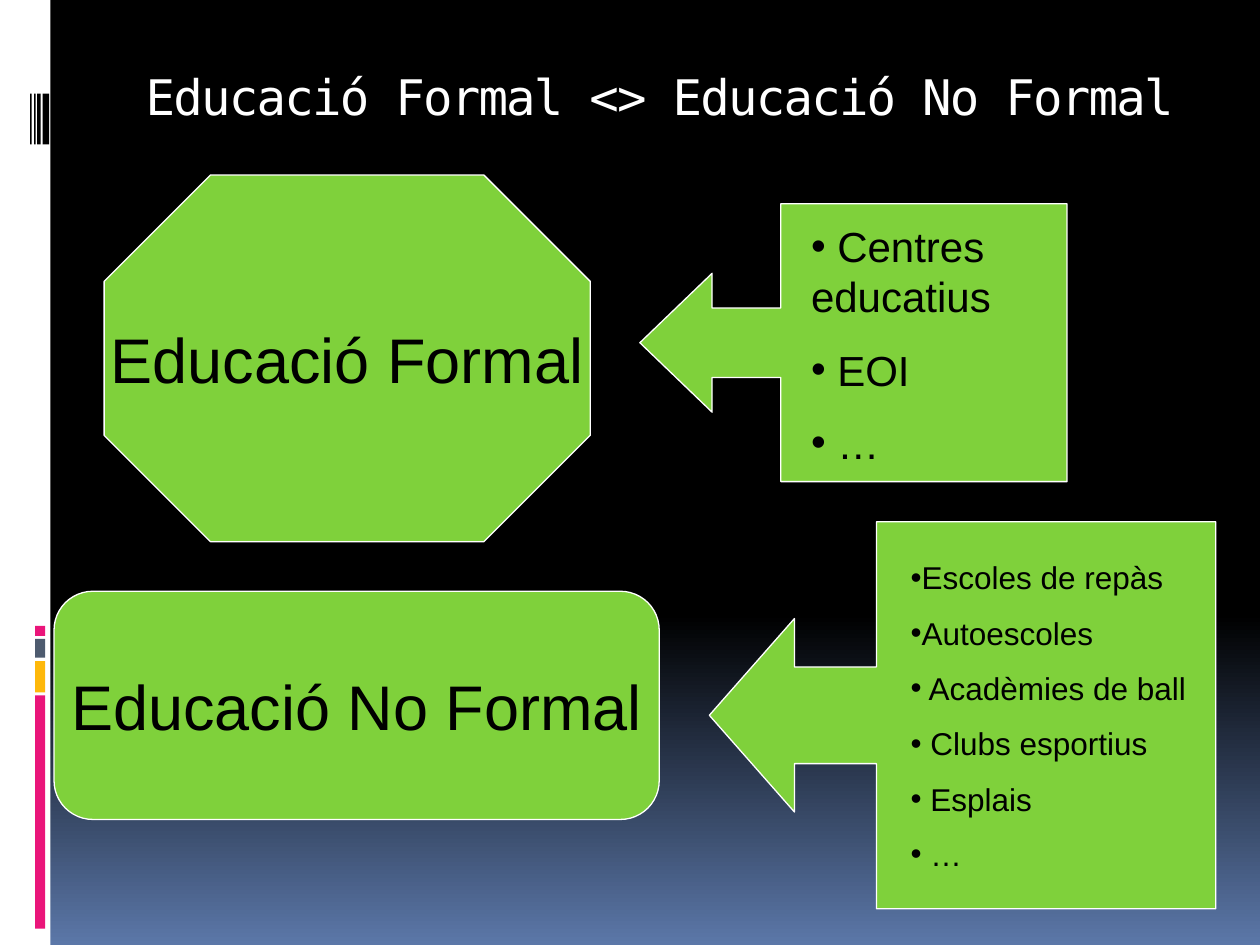
import copy

from lxml import etree
from pptx import Presentation
from pptx import util as u
from pptx.dml.color import RGBColor
from pptx.enum import shapes, text
from pptx.oxml import ns

GREEN, WHITE, BLACK, PINK = "7FD13B", "FFFFFF", "000000", "EA157A"
KIND = shapes.MSO_SHAPE


def add_block(kind, box, fill, outline=None, adjustments=()):
    shape = slide.shapes.add_shape(kind, *[u.Cm(v) for v in box])
    shape.shadow.inherit = False
    shape.fill.solid()
    shape.fill.fore_color.rgb = RGBColor.from_string(fill)
    if outline:
        shape.line.color.rgb = RGBColor.from_string(outline)
        shape.line.width = u.Pt(0.75)
    else:
        shape.line.fill.background()
    for index, value in enumerate(adjustments):
        shape.adjustments[index] = value
    return shape


def format_text(paragraph, size, font="Arial", color=BLACK):
    for run in paragraph.runs:
        run.font.size = u.Pt(size)
        run.font.name = font
        run.font.color.rgb = RGBColor.from_string(color)


presentation = Presentation()
presentation.slide_width = u.Cm(25.4)
presentation.slide_height = u.Cm(19.05)
slide = presentation.slides.add_slide(presentation.slide_layouts[6])

background = slide.background.fill
background.gradient()
background.gradient_angle = 270
stop_list = slide.element.find(".//" + ns.qn("a:gsLst"))
stop_list.insert(1, copy.deepcopy(stop_list[0]))
stops = [(0, BLACK), (0.65, BLACK), (1, "5B77A8")]
for stop, (position, color) in zip(background.gradient_stops, stops):
    stop.position = position
    stop.color.rgb = RGBColor.from_string(color)

add_block(KIND.RECTANGLE, (0, 0, 1.02, 19.05), WHITE)
for top, height, color in [
    (14.02, 4.7, PINK),
    (13.33, 0.63, "FEB80A"),
    (12.88, 0.38, "4E5B6F"),
    (12.62, 0.2, PINK),
]:
    add_block(KIND.RECTANGLE, (0.71, top, 0.2, height), color)
for left, width in [(0.86, 0.13), (0.75, 0.07), (0.69, 0.03), (0.61, 0.03)]:
    add_block(KIND.RECTANGLE, (left, 1.89, width, 1.02), BLACK)

title = slide.shapes.add_textbox(u.Cm(1.19), u.Cm(1.19), u.Cm(24.21), u.Cm(1.5))
title.text_frame.word_wrap = True
title.text_frame.vertical_anchor = text.MSO_ANCHOR.MIDDLE
title.text_frame.text = "Educació Formal <> Educació No Formal"
paragraph = title.text_frame.paragraphs[0]
paragraph.alignment = text.PP_ALIGN.CENTER
format_text(paragraph, 28, "DejaVu Sans Mono", WHITE)
paragraph.runs[0].font._element.set("spc", "-100")

for kind, box, adjustment, label in [
    (KIND.OCTAGON, (2.1, 3.53, 9.8, 7.39), 0.29, "Educació Formal"),
    (KIND.ROUNDED_RECTANGLE, (1.09, 11.92, 12.2, 4.6), 0.17, "Educació No Formal"),
]:
    shape = add_block(kind, box, GREEN, WHITE, [adjustment])
    shape.text_frame.word_wrap = False
    shape.text_frame.vertical_anchor = text.MSO_ANCHOR.MIDDLE
    shape.text_frame.text = label
    paragraph = shape.text_frame.paragraphs[0]
    paragraph.alignment = text.PP_ALIGN.CENTER
    format_text(paragraph, 36)

callouts = [
    ((14.3, 10.52, 10.21, 7.8), 0.22, (18.11, 11.13, 9.6, 6.76), 18, 10,
     ["Escoles de repàs", "Autoescoles", " Acadèmies de ball",
      " Clubs esportius", " Esplais", " …"]),
    ((12.9, 4.11, 8.61, 5.6), 0.26, (16.1, 4.32, 6.2, 5.38), 24, 13,
     [" Centres educatius", " EOI", " …"]),
]
for arrow_box, head, text_box, size, gap, items in callouts:
    add_block(KIND.LEFT_ARROW_CALLOUT, arrow_box, GREEN, WHITE, [0.25, 0.25, head, 0.67])
    item_list = slide.shapes.add_textbox(*[u.Cm(v) for v in text_box])
    item_list.text_frame.word_wrap = True
    item_list.text_frame.text = "\n".join(items)
    for paragraph in item_list.text_frame.paragraphs:
        paragraph.space_before = u.Pt(gap)
        format_text(paragraph, size)
        properties = paragraph._p.get_or_add_pPr()
        etree.SubElement(properties, ns.qn("a:buFont")).set("typeface", "Arial")
        etree.SubElement(properties, ns.qn("a:buChar")).set("char", "•")

presentation.save("out.pptx")
